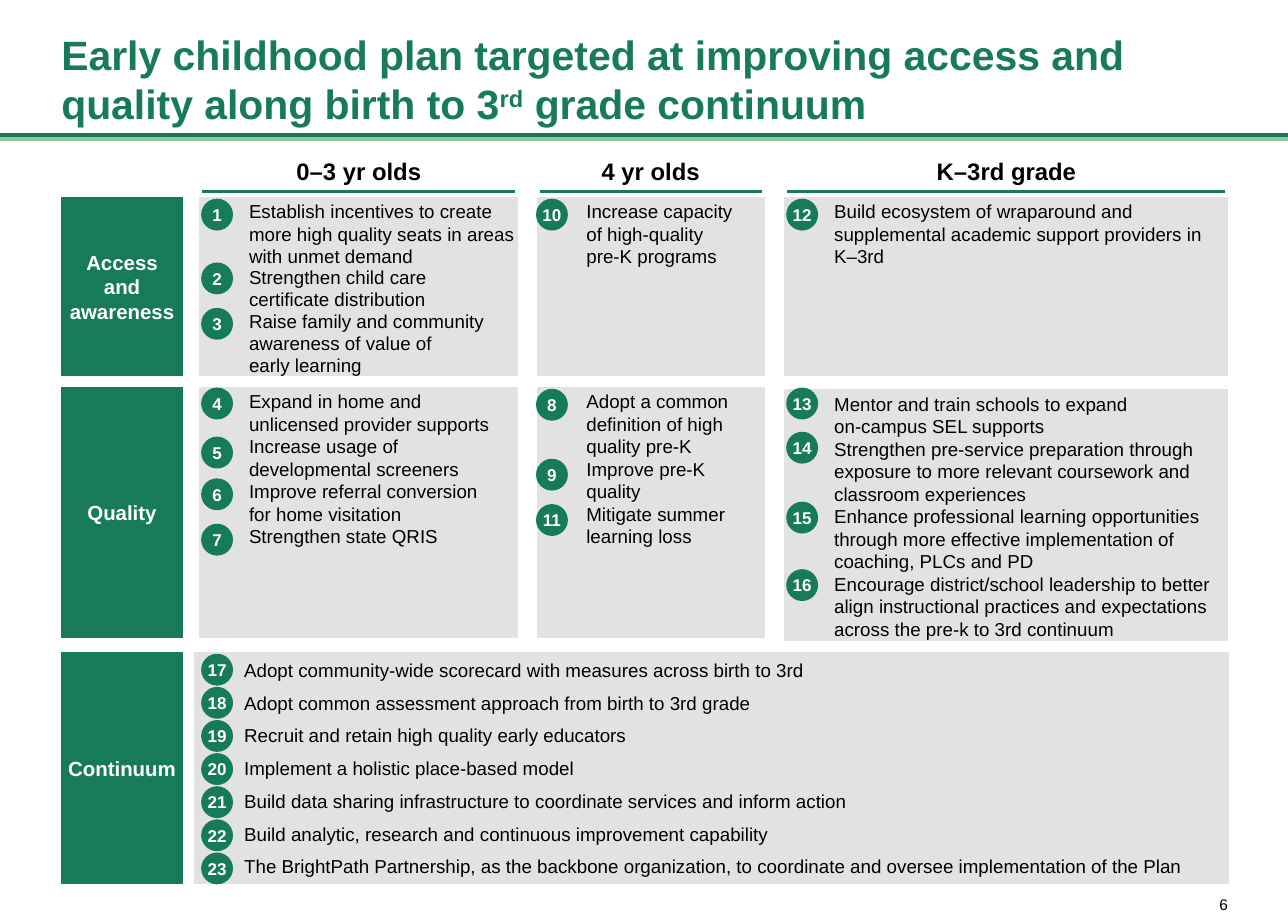
from collections import namedtuple

from lxml import etree
from pptx import Presentation
from pptx.dml.color import RGBColor
from pptx.enum.shapes import MSO_CONNECTOR as Connector, MSO_SHAPE as Preset
from pptx.enum.text import MSO_ANCHOR as Anchor, MSO_AUTO_SIZE as AutoSize, PP_ALIGN as Align
from pptx.oxml.ns import qn
from pptx.util import Inches, Pt

COLORS = {
    "green": "177B57",
    "light_green": "8EC6A1",
    "gray": "E2E2E2",
    "white": "FFFFFF",
    "black": "000000",
}
Stage = namedtuple("Stage", "name left width badge_left")
Theme = namedtuple("Theme", "name top height")
Cell = namedtuple("Cell", "theme stage badges lines spacing drop", defaults=(1, 0))

INFANTS = Stage("0–3 yr olds", 1.63, 2.59, 1.64)
PRE_K = Stage("4 yr olds", 4.38, 1.85, 4.37)
GRADES = Stage("K–3rd grade", 6.4, 3.61, 6.41)

ACCESS = Theme("Access\nand awareness", 1.61, 1.45)
QUALITY = Theme("Quality", 3.16, 2.04)
CONTINUUM = Theme("Continuum", 5.32, 1.88)

CELLS = [
    Cell(ACCESS, INFANTS, {1: 1.62, 2: 2.14, 3: 2.51}, [
        "Establish incentives to create more high quality seats in areas with unmet demand",
        "Strengthen child care\vcertificate distribution",
        "Raise family and community awareness of value of",
        "early learning",
    ], spacing=0.97),
    Cell(ACCESS, PRE_K, {10: 1.62}, [
        "Increase capacity",
        "of high-quality\vpre-K programs",
    ]),
    Cell(ACCESS, GRADES, {12: 1.62}, [
        "Build ecosystem of wraparound and supplemental academic support providers in K–3rd",
    ]),
    Cell(QUALITY, INFANTS, {4: 3.16, 5: 3.56, 6: 3.9, 7: 4.27}, [
        "Expand in home and unlicensed provider supports",
        "Increase usage of\vdevelopmental screeners",
        "Improve referral conversion",
        "for home visitation",
        "Strengthen state QRIS",
    ]),
    Cell(QUALITY, PRE_K, {8: 3.17, 9: 3.74, 11: 4.11}, [
        "Adopt a common definition of high quality pre-K",
        "Improve pre-K quality",
        "Mitigate summer learning loss",
    ]),
    Cell(QUALITY, GRADES, {13: 3.16, 14: 3.52, 15: 4.09, 16: 4.64}, [
        "Mentor and train schools to expand",
        "on-campus SEL supports",
        "Strengthen pre-service preparation through exposure to more relevant coursework "
        "and classroom experiences",
        "Enhance professional learning opportunities through more effective implementation "
        "of coaching, PLCs and PD",
        "Encourage district/school leadership to better align instructional practices and "
        "expectations across the pre-k to 3rd continuum",
    ], drop=0.02),
]
CONTINUUM_ACTIONS = [
    "Adopt community-wide scorecard with measures across birth to 3rd",
    "Adopt common assessment approach from birth to 3rd grade",
    "Recruit and retain high quality early educators",
    "Implement a holistic place-based model",
    "Build data sharing infrastructure to coordinate services and inform action",
    "Build analytic, research and continuous improvement capability",
    "The BrightPath Partnership, as the backbone organization, to coordinate and oversee "
    "implementation of the Plan",
]


def rgb(color):
    return RGBColor.from_string(COLORS[color])


def style_font(font, size, color, bold=False):
    font.name = "Arial"
    font.size = Pt(size)
    font.bold = bold
    font.color.rgb = rgb(color)


def set_frame(frame, anchor, insets, wrap=True):
    frame.auto_size = AutoSize.NONE
    frame.word_wrap = wrap
    frame.vertical_anchor = anchor
    (frame.margin_left, frame.margin_top,
     frame.margin_right, frame.margin_bottom) = map(Inches, insets)


def write(frame, text, size, color, bold=False, align=Align.LEFT):
    frame.text = text
    for paragraph in frame.paragraphs:
        paragraph.alignment = align
        for run in paragraph.runs:
            style_font(run.font, size, color, bold)


def add_block(slide, preset, box, color, outlined=True):
    block = slide.shapes.add_shape(preset, *map(Inches, box))
    block.shadow.inherit = False
    block.fill.solid()
    block.fill.fore_color.rgb = rgb(color)
    if outlined:
        block.line.color.rgb = rgb(color)
        block.line.width = Pt(0.75)
    else:
        block.line.fill.background()
    return block.text_frame


def add_rule(slide, left, right, top, color, weight):
    rule = slide.shapes.add_connector(
        Connector.STRAIGHT, Inches(left), Inches(top), Inches(right), Inches(top))
    rule.line.color.rgb = rgb(color)
    rule.line.width = Pt(weight)
    etree.SubElement(rule._element.spPr, qn("a:effectLst"))


def add_title(slide):
    title = slide.shapes.title
    title.left, title.top, title.width, title.height = map(Inches, (0.5, 0.18, 9.5, 0.91))
    set_frame(title.text_frame, Anchor.BOTTOM, (0, 0.05, 0, 0.05))
    heading = title.text_frame.paragraphs[0]
    heading.alignment = Align.LEFT
    for text, baseline in (
        ("Early childhood plan targeted at improving access and quality along birth to 3", 0),
        ("rd", 30000),
        (" grade continuum", 0),
    ):
        run = heading.add_run()
        run.text = text
        style_font(run.font, 24, "green", True)
        run.font._element.set("baseline", str(baseline))


def add_page_number(slide):
    frame = slide.shapes.add_textbox(*map(Inches, (9.78, 7.3, 0.23, 0.14))).text_frame
    set_frame(frame, Anchor.TOP, (0, 0, 0, 0), wrap=False)
    write(frame, "6", 9, "black", align=Align.RIGHT)


def add_stage_header(slide, stage):
    frame = slide.shapes.add_textbox(
        *map(Inches, (stage.left, 1.17, stage.width, 0.39))).text_frame
    set_frame(frame, Anchor.BOTTOM, (0.1, 0.1, 0.1, 0.05))
    write(frame, stage.name, 14, "black", True, Align.CENTER)
    add_rule(slide, stage.left + 0.02, stage.left + stage.width - 0.02, 1.56, "green", 2)


def add_theme_label(slide, theme):
    frame = add_block(slide, Preset.RECTANGLE, (0.5, theme.top, 0.99, theme.height), "green")
    set_frame(frame, Anchor.MIDDLE, (0.01, 0.05, 0.01, 0.05))
    write(frame, theme.name, 12, "white", True, Align.CENTER)


def add_badge(slide, number, left, top):
    frame = add_block(slide, Preset.OVAL, (left, top, 0.26, 0.26), "green", outlined=False)
    set_frame(frame, Anchor.MIDDLE, (0, 0, 0, 0), wrap=False)
    write(frame, str(number), 10, "white", True, Align.CENTER)


def add_actions(slide, box, lines, insets):
    frame = add_block(slide, Preset.RECTANGLE, box, "gray")
    set_frame(frame, Anchor.TOP, insets)
    write(frame, "\n".join(lines), 11, "black")
    return frame.paragraphs[1:]


def add_cell(slide, cell):
    stage, theme = cell.stage, cell.theme
    box = (stage.left, theme.top + cell.drop, stage.width, theme.height)
    for paragraph in add_actions(slide, box, cell.lines, (0.4, 0.02, 0.01, 0.02)):
        paragraph.line_spacing = float(cell.spacing)
    for number, top in cell.badges.items():
        add_badge(slide, number, stage.badge_left, top)


def add_continuum(slide):
    box = (1.59, CONTINUUM.top, 8.42, CONTINUUM.height)
    for paragraph in add_actions(slide, box, CONTINUUM_ACTIONS, (0.4, 0.05, 0.02, 0.05)):
        paragraph.space_before = Pt(6)
    for step in range(len(CONTINUUM_ACTIONS)):
        add_badge(slide, 17 + step, INFANTS.badge_left, 5.33 + 0.27 * step)


def main():
    deck = Presentation()
    deck.slide_width, deck.slide_height = Inches(10.5), Inches(7.5)
    slide = deck.slides.add_slide(deck.slide_layouts[5])
    add_rule(slide, 0, 10.5, 1.13, "light_green", 2.25)
    add_rule(slide, 0, 10.5, 1.1, "green", 2.25)
    add_title(slide)
    for stage in (INFANTS, PRE_K, GRADES):
        add_stage_header(slide, stage)
    for theme in (ACCESS, QUALITY, CONTINUUM):
        add_theme_label(slide, theme)
    for cell in CELLS:
        add_cell(slide, cell)
    add_continuum(slide)
    add_page_number(slide)
    deck.save("out.pptx")


if __name__ == "__main__":
    main()
